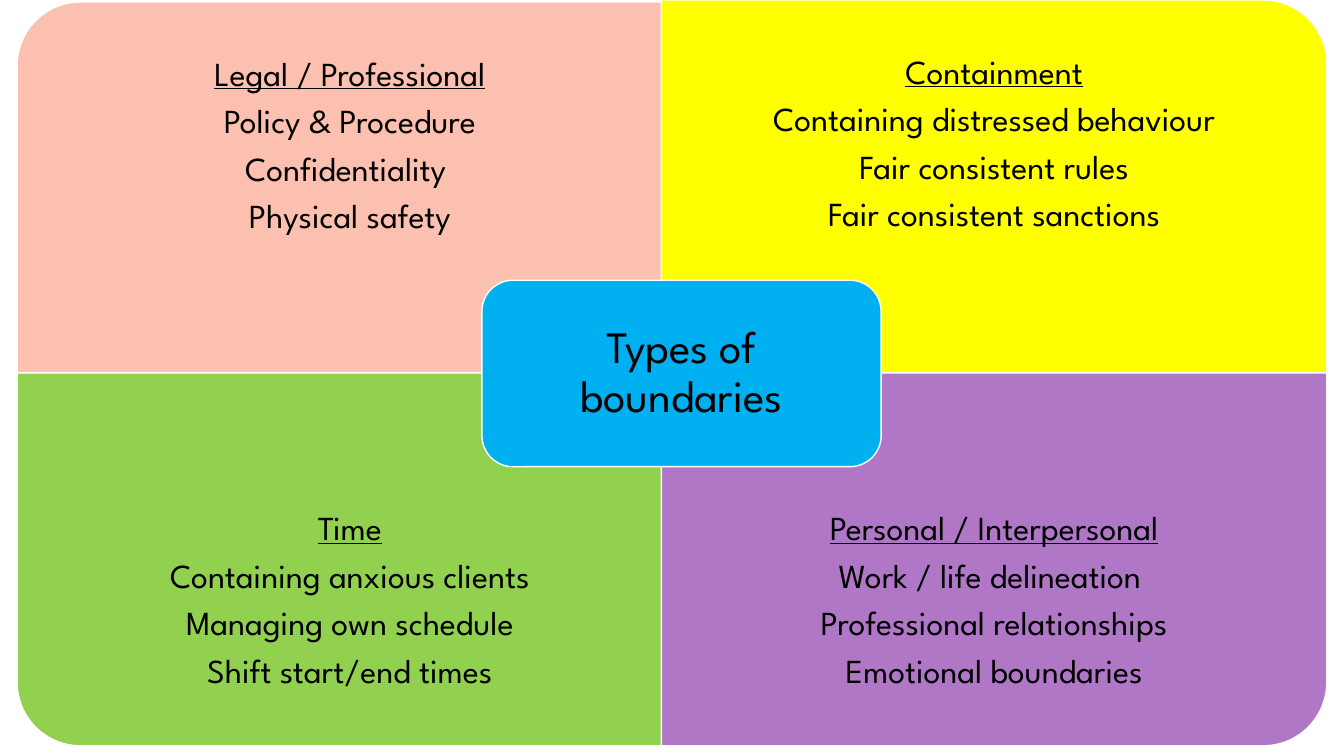
import math
from pptx import Presentation
from pptx import util as u
from pptx.dml.color import RGBColor
from pptx.enum import shapes, text

PX = 9144  # EMU per px, 100 px to the inch


def px(n):
    return u.Emu(round(n * PX))


def rgb(hex):
    return RGBColor.from_string(hex)


def write(frame, lines, size=24, font="League Spartan", color="000000",
          head=False, pad=(23, 23, 23, 23)):
    """Fill a frame with centred lines; head underlines the first one."""
    frame.word_wrap = True
    frame.vertical_anchor = text.MSO_ANCHOR.MIDDLE
    (frame.margin_left, frame.margin_top,
     frame.margin_right, frame.margin_bottom) = map(px, pad)
    for i, line in enumerate(lines):
        par = frame.paragraphs[0] if i == 0 else frame.add_paragraph()
        par.alignment = text.PP_ALIGN.CENTER
        par.line_spacing = 0.9
        par.space_after = u.Pt(round(size / 3))
        run = par.add_run()
        run.text = line
        run.font.size = u.Pt(size)
        run.font.name = font
        run.font.color.rgb = rgb(color)
        run.font.underline = head and i == 0


class Board:
    def __init__(self, slide, edge="FFFFFF"):
        self.shapes = slide.shapes
        self.edge = edge

    def paint(self, shape, fill):
        shape.shadow.inherit = False
        shape.fill.solid()
        shape.fill.fore_color.rgb = rgb(fill)
        shape.line.color.rgb = rgb(self.edge)
        shape.line.width = u.Pt(1)

    def panel(self, x, y, w, h, side, end, fill, lines, arc=63):
        """Draw a panel round only at its outer corner.

        side is -1 for left and 1 for right, end is -1 for top and 1 for bottom.
        """
        a, b = w / 2, h / 2
        turns = [math.radians(t) for t in range(0, 91, 5)]
        spots = [(-a, -b), (-a, b)]
        spots += [(a - arc + arc * math.sin(t), b - arc + arc * math.cos(t))
                  for t in turns]
        spots.append((a, -b))
        spots = [(px(x + a + side * p), px(y + b + end * q)) for p, q in spots]
        form = self.shapes.build_freeform(*spots[0])
        form.add_line_segments(spots[1:], close=True)
        shape = form.convert_to_shape()
        self.paint(shape, fill)
        pad = (23, 23, 23, 106) if end < 0 else (23, 106, 23, 23)
        write(shape.text_frame, lines, head=True, pad=pad)

    def hub(self, x, y, w, h, fill, line):
        shape = self.shapes.add_shape(shapes.MSO_SHAPE.ROUNDED_RECTANGLE,
                                      px(x), px(y), px(w), px(h))
        self.paint(shape, fill)
        write(shape.text_frame, [line], size=32, pad=(24, 24, 24, 24))


PANELS = [
    (17, 2, -1, -1, "FBC0AF", ["Legal / Professional", "Policy & Procedure",
                               "Confidentiality ", "Physical safety"]),
    (656, 0, 1, -1, "FFFF00", ["Containment", "Containing distressed behaviour",
                               "Fair consistent rules",
                               "Fair consistent sanctions"]),
    (17, 370, -1, 1, "92D050", ["Time", "Containing anxious clients",
                                "Managing own schedule",
                                "Shift start/end times"]),
    (656, 370, 1, 1, "B077C7", ["Personal / Interpersonal",
                                "Work / life delineation ",
                                "Professional relationships",
                                "Emotional boundaries"]),
]


def main():
    deck = Presentation()
    deck.slide_width, deck.slide_height = px(1333), px(750)
    board = Board(deck.slides.add_slide(deck.slide_layouts[6]))
    for x, y, side, end, fill, lines in PANELS:
        board.panel(x, y, 660, 370, side, end, fill, lines)
    board.hub(478, 278, 396, 185, "00B0F0", "Types of boundaries")
    deck.save("out.pptx")


if __name__ == "__main__":
    main()
